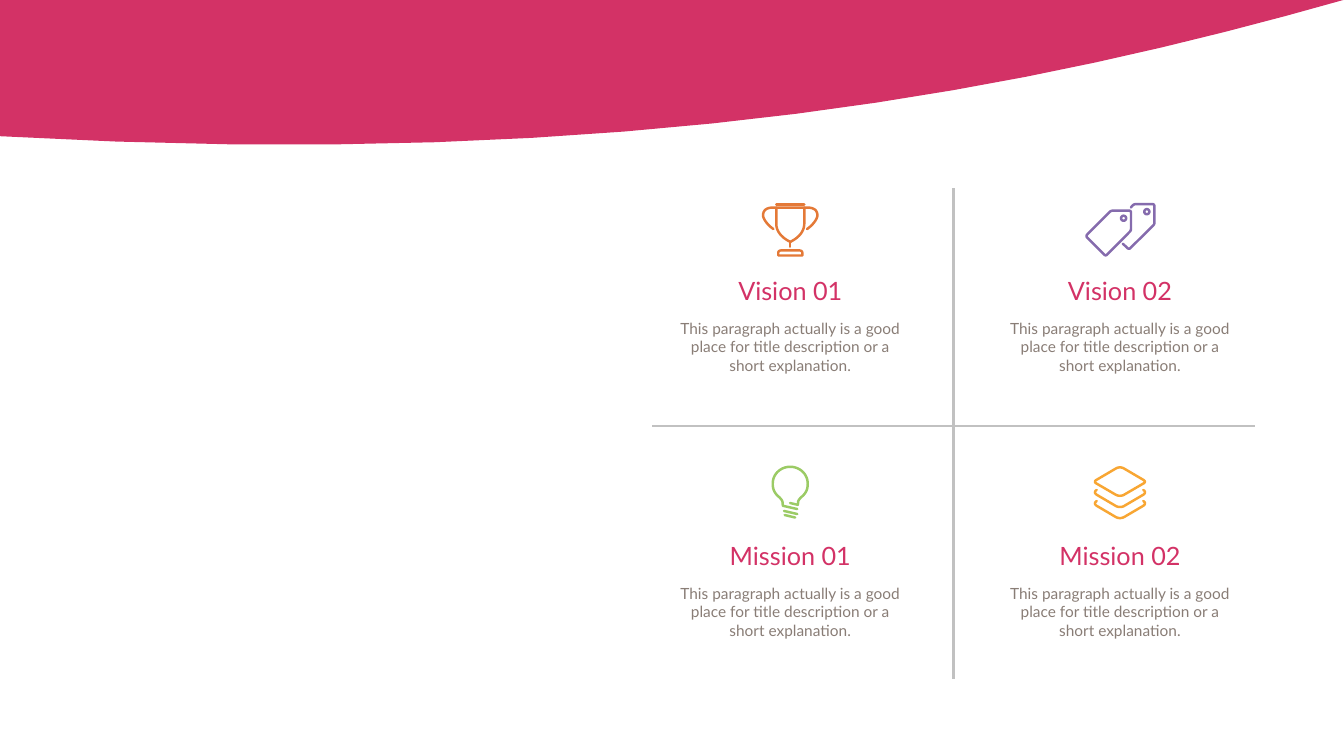
from dataclasses import dataclass

from lxml.etree import SubElement
from pptx import Presentation
from pptx.dml.color import RGBColor
from pptx.enum.shapes import MSO_CONNECTOR
from pptx.enum.text import PP_ALIGN
from pptx.oxml.ns import qn
from pptx.util import Pt

Point = tuple[float, float]
Segment = tuple[float, ...]

PINK, GREY, RULE = "D33266", "897D76", "C1C1C1"
DESCRIPTION = "This paragraph actually is a good place for title description or a short explanation."
COLUMN_CENTRES = (564.5, 800)
FIRST_TITLE_TOP, ROW_PITCH = 196.6, 189.4
TEXT_WIDTH = 157
CURVE_STEPS = 16


@dataclass(frozen=True)
class Stroke:
    start: Point
    segments: list[Segment]
    closed: bool = False


@dataclass(frozen=True)
class Topic:
    title: str
    colour: str
    icon: list[Stroke]


def hex_colour(value: str) -> RGBColor:
    return RGBColor.from_string(value)


def mirrored(stroke: Stroke) -> Stroke:
    x, y = stroke.start
    flipped = [tuple(-v if i % 2 == 0 else v for i, v in enumerate(s)) for s in stroke.segments]
    return Stroke((-x, y), flipped, stroke.closed)


def ring(x: float, y: float, r: float) -> Stroke:
    k = r * 0.55
    return Stroke((x + r, y), [
        (x + r, y + k, x + k, y + r, x, y + r), (x - k, y + r, x - r, y + k, x - r, y),
        (x - r, y - k, x - k, y - r, x, y - r), (x + k, y - r, x + r, y - k, x + r, y),
    ], True)


def stack_layer(top: float) -> Stroke:
    return Stroke((-16.6, top), [
        (-18.4, top + 1, -18.2, top + 2.4, -16.6, top + 3.4), (-3, top + 11.4),
        (-1.2, top + 12.4, 1.2, top + 12.4, 3, top + 11.4), (16.6, top + 3.4),
        (18.2, top + 2.4, 18.4, top + 1, 16.6, top),
    ])


def outline(stroke: Stroke) -> list[Point]:
    points = [stroke.start]
    for segment in stroke.segments:
        if len(segment) == 2:
            points.append(segment)
            continue
        x0, y0 = points[-1]
        x1, y1, x2, y2, x3, y3 = segment
        for step in range(1, CURVE_STEPS + 1):
            t = step / CURVE_STEPS
            a, b, c, d = (1 - t) ** 3, 3 * t * (1 - t) ** 2, 3 * t * t * (1 - t), t ** 3
            points.append((a * x0 + b * x1 + c * x2 + d * x3, a * y0 + b * y1 + c * y2 + d * y3))
    return points


def draw_outline(slide, stroke: Stroke, left: float = 0, top: float = 0):
    points = [(Pt(left + x), Pt(top + y)) for x, y in outline(stroke)]
    builder = slide.shapes.build_freeform(*points[0])
    builder.add_line_segments(points[1:], close=stroke.closed)
    shape = builder.convert_to_shape()
    shape.shadow.inherit = False
    return shape


def draw_banner(slide) -> None:
    edge = Stroke((0, 0), [(959.5, 0), (743.8, 61.2, 452.9, 123.1, 0, 97.3)], True)
    banner = draw_outline(slide, edge)
    banner.fill.solid()
    banner.fill.fore_color.rgb = hex_colour(PINK)
    banner.line.fill.background()


def draw_rule(slide, start: Point, end: Point) -> None:
    rule = slide.shapes.add_connector(MSO_CONNECTOR.STRAIGHT, *map(Pt, start + end))
    rule.line.color.rgb = hex_colour(RULE)
    rule.line.width = Pt(1.5)
    SubElement(rule._element.spPr, qn("a:effectLst"))


def draw_icon(slide, topic: Topic, centre: float, top: float) -> None:
    for stroke in topic.icon:
        shape = draw_outline(slide, stroke, centre, top)
        shape.fill.background()
        shape.line.color.rgb = hex_colour(topic.colour)
        shape.line.width = Pt(1.75)
        pen = shape.line._get_or_add_ln()
        pen.set("cap", "rnd")
        SubElement(pen, qn("a:round"))


def draw_text(slide, text: str, centre: float, top: float, height: float,
              size: float, colour: str) -> None:
    box = slide.shapes.add_textbox(Pt(centre - TEXT_WIDTH / 2), Pt(top), Pt(TEXT_WIDTH), Pt(height))
    frame = box.text_frame
    frame.word_wrap = True
    frame.margin_left = frame.margin_right = frame.margin_top = frame.margin_bottom = 0
    frame.text = text
    paragraph = frame.paragraphs[0]
    paragraph.alignment = PP_ALIGN.CENTER
    font = paragraph.runs[0].font
    font.name, font.size = "Lato", Pt(size)
    font.color.rgb = hex_colour(colour)


def draw_topic(slide, topic: Topic, centre: float, title_top: float) -> None:
    draw_icon(slide, topic, centre, title_top - 53)
    draw_text(slide, topic.title, centre, title_top, 21.6, 18, PINK)
    draw_text(slide, DESCRIPTION, centre, title_top + 31.2, 56, 11, GREY)


HANDLE = Stroke((-10, 4.7), [
    (-12.5, 4.7), (-15.3, 4.7, -17.3, 5.6, -18.3, 6.8),
    (-19.3, 8.3, -19.7, 9.8, -19.2, 11.5), (-18.1, 14.8, -14.6, 18.3, -12, 20),
])
TROPHY = [
    Stroke((-10, 2.6), [(10, 2.6)]),
    Stroke((-10, 4.7), [(-10, 16.2), (-10, 23.5, -3.3, 27.6, 0, 29.2),
                        (3.3, 27.6, 10, 23.5, 10, 16.2), (10, 4.7)], True),
    HANDLE,
    mirrored(HANDLE),
    Stroke((0, 29.2), [(0, 32.7)]),
    Stroke((-8.6, 38.9), [(-8.6, 37.1), (-8.6, 36, -7.7, 35.3, -6.5, 35.3), (6.5, 35.3),
                          (7.7, 35.3, 8.6, 36, 8.6, 37.1), (8.6, 38.9)], True),
]
TAGS = [
    Stroke((7.9, 4.7), [(8.6, 3.2, 10, 2.2, 11.5, 2.2), (23, 2.2), (24, 2.2, 24.6, 2.8, 24.6, 3.8),
                        (24.6, 15.5), (24.6, 16.5, 24.2, 17, 23.6, 17.6), (7.5, 33.6),
                        (6.8, 34.3, 6, 34.3, 5.3, 33.6), (2, 30.5)]),
    ring(19.2, 7.6, 1.8),
    Stroke((7.9, 19.8), [(7.9, 8.4), (7.9, 7.4, 7.4, 6.9, 6.5, 6.9), (-5, 6.9),
                         (-6, 6.9, -6.8, 7.3, -7.4, 7.9), (-23.4, 24),
                         (-24, 24.6, -24, 25.6, -23.4, 26.2), (-11.4, 38.2),
                         (-10.8, 39, -9.9, 39, -9.3, 38.4), (7, 22),
                         (7.6, 21.4, 7.9, 20.7, 7.9, 19.8)], True),
    ring(2.6, 12.3, 1.8),
]
BULB = [
    Stroke((-0.1, 26.3), [(5.4, 27.6), (5.6, 26.3), (5.6, 24.5, 6.2, 23.8, 8, 22),
                          (10.4, 20, 12.5, 17.5, 12.5, 12.6), (12.5, 5, 6.2, 0.4, 0, 0.4),
                          (-6.2, 0.4, -12.5, 5, -12.5, 12.6), (-12.5, 17.4, -10.4, 20, -8, 22),
                          (-5.5, 24.4, -5.4, 25.3, -5.4, 27), (-5.2, 28.3), (5, 30.6)]),
    Stroke((-4.5, 32), [(5, 34.2)]),
    Stroke((-4, 34.9), [(3.5, 36.7)]),
]
STACK = [
    Stroke((-16.6, 9.7), [(-3, 1.7), (-1.2, 0.6, 1.2, 0.6, 3, 1.7), (16.6, 9.7),
                          (18.2, 10.6, 18.2, 11.6, 16.6, 12.5), (3, 20.4),
                          (1.2, 21.4, -1.2, 21.4, -3, 20.4), (-16.6, 12.5),
                          (-18.2, 11.6, -18.2, 10.6, -16.6, 9.7)], True),
    stack_layer(17),
    stack_layer(24.9),
]
TOPICS = [
    Topic("Vision 01", "E47937", TROPHY),
    Topic("Vision 02", "856BAD", TAGS),
    Topic("Mission 01", "9BCB65", BULB),
    Topic("Mission 02", "F8A633", STACK),
]


def main() -> None:
    deck = Presentation()
    deck.slide_width, deck.slide_height = Pt(960), Pt(540)
    slide = deck.slides.add_slide(deck.slide_layouts[6])
    draw_banner(slide)
    draw_rule(slide, (465.8, 304), (896.4, 304))
    draw_rule(slide, (681.1, 134.6), (681.1, 485.3))
    for index, topic in enumerate(TOPICS):
        row, column = divmod(index, len(COLUMN_CENTRES))
        draw_topic(slide, topic, COLUMN_CENTRES[column], FIRST_TITLE_TOP + row * ROW_PITCH)
    deck.save("out.pptx")


if __name__ == "__main__":
    main()
